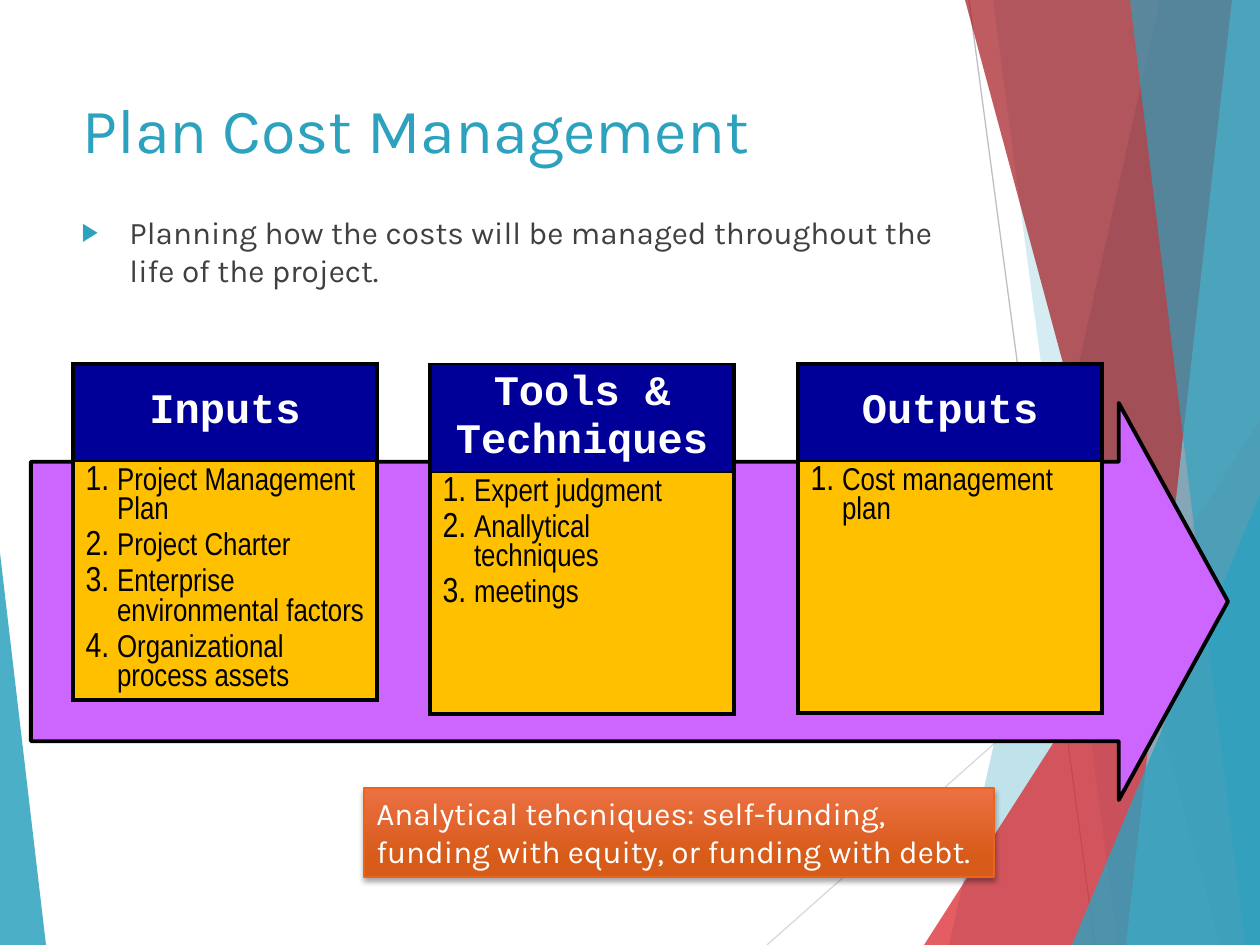
from lxml.etree import SubElement
from pptx import Presentation
from pptx.dml.color import RGBColor
from pptx.enum.shapes import MSO_CONNECTOR, MSO_SHAPE
from pptx.enum.text import MSO_ANCHOR, MSO_AUTO_SIZE, PP_ALIGN
from pptx.oxml.ns import qn
from pptx.util import Emu, Inches, Pt

W, H = 1260, 945
C = {"teal": "2DA2BF", "sky": "7ACBE0", "red": "DA1F28", "dark_red": "A3171E",
     "grey": "BFBFBF", "pale_grey": "D9D9D9", "text": "404040", "black": "000000",
     "white": "FFFFFF", "purple": "CC66FF", "navy": "000099", "gold": "FFC000",
     "orange_top": "EC7043", "orange_end": "D75B19", "orange_line": "EB641B"}


def px(n):
    return Emu(round(n * 914400 / 126))


def box_emu(box):
    return [px(n) for n in box]


def rgb(name):
    return RGBColor.from_string(C[name])


def sub(parent, tag, **attrs):
    return SubElement(parent, qn(tag), {k: str(v) for k, v in attrs.items()})


def add_run(p, text, size, font, color, bold=False):
    r = p.add_run()
    r.text = text
    r.font.size, r.font.name, r.font.bold = Pt(size), font, bold
    r.font.color.rgb = rgb(color)


def set_indent(p, inches):
    pPr = p._p.get_or_add_pPr()
    pPr.set("marL", str(Inches(inches)))
    pPr.set("indent", str(-Inches(inches)))
    return pPr


def paint(sp, color, alpha=100):
    """Flat fill, no outline and no shadow."""
    sp.shadow.inherit = False
    sp.fill.solid()
    sp.fill.fore_color.rgb = rgb(color)
    sp.line.fill.background()
    if alpha < 100:
        clr = sp._element.spPr.find(qn("a:solidFill")).find(qn("a:srgbClr"))
        sub(clr, "a:alpha", val=alpha * 1000)


def add_backdrop(s):
    def line(x1, y1, x2, y2, color):
        cn = s.shapes.add_connector(MSO_CONNECTOR.STRAIGHT, *box_emu((x1, y1, x2, y2)))
        cn.line.color.rgb, cn.line.width = rgb(color), Pt(0.75)
        sub(cn._element.spPr, "a:effectLst")

    def band(top, bottom, color, alpha):
        """Strip from a slanted left edge to the right side of the slide."""
        fb = s.shapes.build_freeform(px(top), 0, scale=1.0)
        fb.add_line_segments([(px(W), 0), (px(W), px(H)), (px(bottom), px(H))])
        paint(fb.convert_to_shape(), color, alpha)

    def corner(left, top, width, apex, color, alpha):
        sp = s.shapes.add_shape(MSO_SHAPE.ISOSCELES_TRIANGLE,
                                *box_emu((left, top, width, H - top)))
        sp.adjustments[0] = apex
        paint(sp, color, alpha)

    line(969, 0, 1095, H, "grey")
    line(W, 508, 767, H, "pale_grey")
    band(1160, 949, "teal", 30)
    band(993, 1118, "teal", 20)
    corner(924, 420, 336, 1, "red", 72)
    band(965, 1220, "dark_red", 70)
    band(1232, 1126, "sky", 70)
    band(1130, 1245, "teal", 65)
    corner(1072, 495, 188, 1, "teal", 80)
    corner(0, 553, 46, 0, "teal", 85)


def fill_placeholder(s, ph, box, text, size, color):
    s.shapes._spTree.append(ph._element)  # in front of the backdrop
    ph.left, ph.top, ph.width, ph.height = box_emu(box)
    tf = ph.text_frame
    tf.auto_size, tf.vertical_anchor = MSO_AUTO_SIZE.NONE, MSO_ANCHOR.TOP
    p = tf.paragraphs[0]
    p.alignment = PP_ALIGN.LEFT
    add_run(p, text, size, "Karla", color)
    return p


def add_arrow(s, box):
    sp = s.shapes.add_shape(MSO_SHAPE.RIGHT_ARROW, *box_emu(box))
    sp.adjustments[0], sp.adjustments[1] = 0.704, 0.275
    paint(sp, "purple")
    sp.line.color.rgb, sp.line.width = rgb("black"), Pt(2.25)


def style_cell(cell, color, top, bottom):
    tcPr = cell._tc.get_or_add_tcPr()
    for side, width in (("L", 2.25), ("R", 2.25), ("T", top), ("B", bottom)):
        ln = sub(tcPr, f"a:ln{side}", w=Pt(width))
        sub(sub(ln, "a:solidFill"), "a:srgbClr", val=C["black"])
    cell.fill.solid()
    cell.fill.fore_color.rgb = rgb(color)


def add_column(s, left, top, head_h, body_h, heading, items, top_line=2.25):
    """Heading cell above a numbered list."""
    width = 304
    tbl = s.shapes.add_table(2, 1, *box_emu((left, top, width, head_h + body_h))).table
    tbl.first_row = tbl.horz_banding = False
    tbl.rows[0].height, tbl.rows[1].height = px(head_h), px(body_h)
    head, body = tbl.cell(0, 0), tbl.cell(1, 0)
    style_cell(head, "navy", top_line, 1)
    style_cell(body, "gold", 1, 2.25)

    head.vertical_anchor = MSO_ANCHOR.MIDDLE
    p = head.text_frame.paragraphs[0]
    p.alignment, p.space_before = PP_ALIGN.CENTER, Pt(4.8)
    add_run(p, heading, 24, "Courier New", "white", True)

    tf = body.text_frame
    for i, item in enumerate(items):
        p = tf.add_paragraph() if i else tf.paragraphs[0]
        p.line_spacing, p.space_before = 1.0, Pt(3.6)
        pPr = set_indent(p, 0.25)
        sub(pPr, "a:buSzPct", val=110000)
        sub(pPr, "a:buAutoNum", type="arabicPeriod")
        add_run(p, item, 18, "Arial Narrow", "black")


def add_note(s, box, text):
    sp = s.shapes.add_shape(MSO_SHAPE.RECTANGLE, *box_emu(box))
    sp.fill.gradient()
    sp.fill.gradient_angle = 270
    stops = zip(sp.fill.gradient_stops, (0, 0.78), ("orange_top", "orange_end"))
    for stop, position, color in stops:
        stop.position, stop.color.rgb = position, rgb(color)
    sp.line.color.rgb, sp.line.width = rgb("orange_line"), Pt(1)
    # Soft shadow straight below
    sp.shadow.inherit = False
    shadow = sub(sp._element.spPr.find(qn("a:effectLst")), "a:outerShdw",
                 blurRad=Pt(3), dist=Pt(2), dir=90 * 60000, rotWithShape=0)
    sub(sub(shadow, "a:srgbClr", val=C["black"]), "a:alpha", val=35000)
    tf = sp.text_frame
    tf.word_wrap, tf.vertical_anchor = True, MSO_ANCHOR.TOP
    p = tf.paragraphs[0]
    p.alignment = PP_ALIGN.LEFT
    add_run(p, text, 18, "Karla", "white")


def main():
    prs = Presentation()
    prs.slide_width, prs.slide_height = px(W), px(H)
    s = prs.slides.add_slide(prs.slide_layouts[1])
    title, body = s.placeholders
    add_backdrop(s)

    # Title and definition
    fill_placeholder(s, title, (70, 84, 888, 181), "Plan Cost Management", 36, "teal")
    p = fill_placeholder(
        s, body, (69, 207, 888, 98),
        "Planning how the costs will be managed throughout the life of the project.",
        18, "text")
    p.space_before = Pt(10)
    pPr = set_indent(p, 0.38)
    sub(sub(pPr, "a:buClr"), "a:srgbClr", val=C["teal"])
    sub(pPr, "a:buSzPct", val=80000)
    sub(pPr, "a:buChar", char="▶")

    # Process arrow with its three columns
    add_arrow(s, (31, 403, 1197, 397))
    add_column(s, 73, 364, 97, 239, "Inputs",
               ["Project Management Plan", "Project Charter",
                "Enterprise environmental factors", "Organizational process assets"])
    add_column(s, 430, 364, 108, 242, "Tools & Techniques",
               ["Expert judgment", "Anallytical techniques", "meetings"], 1)
    add_column(s, 798, 364, 97, 252, "Outputs", ["Cost management plan"])

    add_note(s, (364, 788, 630, 89),
             "Analytical tehcniques: self-funding, funding with equity, or funding with debt.")
    prs.save("out.pptx")


if __name__ == "__main__":
    main()
